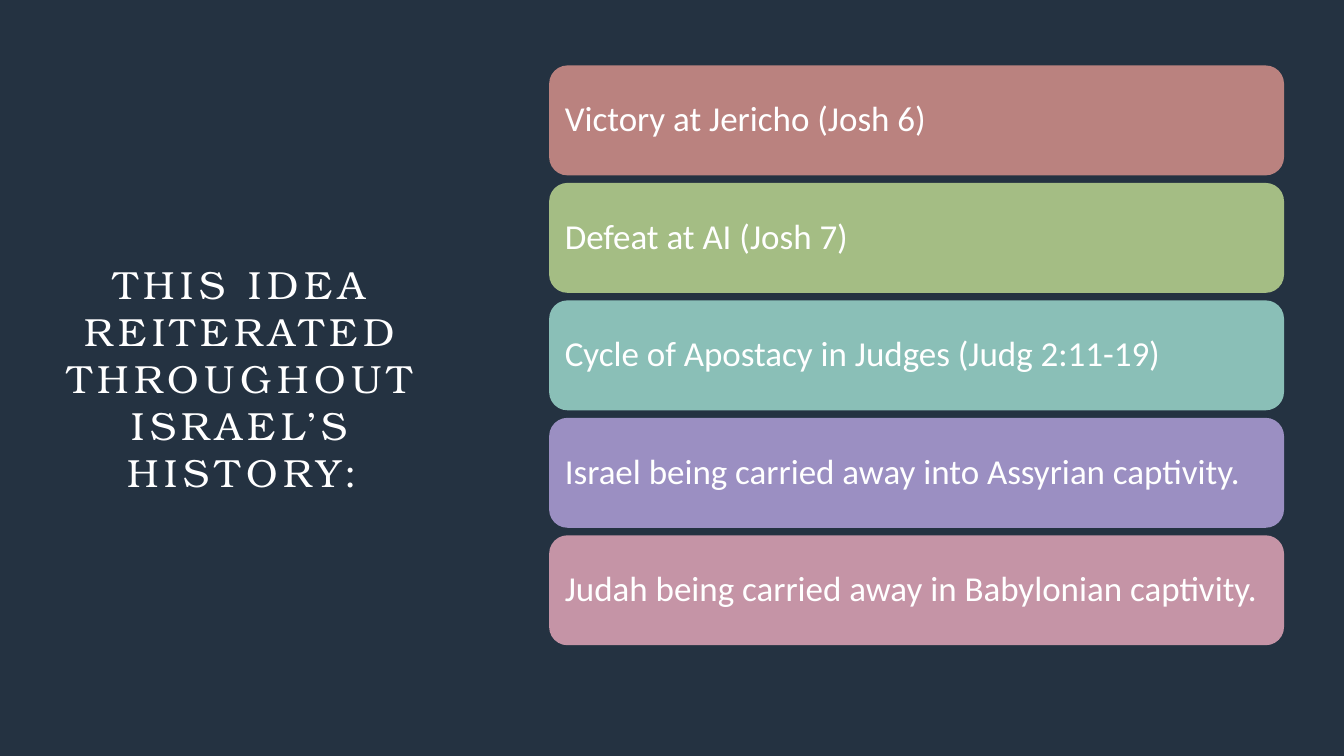
from dataclasses import dataclass
from typing import Any

import pptx
import pptx.dml.color
import pptx.enum.shapes
import pptx.enum.text
import pptx.util

Cm = pptx.util.Cm
Pt = pptx.util.Pt

COLORS = {
    "background": "243241",
    "text": "FFFFFF",
    "rose": "BA827F",
    "green": "A4BD84",
    "teal": "8ABFB7",
    "violet": "9B8FC2",
    "pink": "C594A6",
}

TITLE = "THIS IDEA REITERATED THROUGHOUT ISRAEL’S HISTORY:"
TITLE_BOX = {"left": Cm(1.5), "top": Cm(3), "width": Cm(9.22), "height": Cm(13.03)}
TITLE_FONT = {"name": "TeX Gyre Bonum", "size": Pt(28), "bold": False}
TITLE_SPACING = Pt(4)

BAR_LEFT = 13.84
BAR_TOP = 1.65
BAR_WIDTH = 18.52
BAR_HEIGHT = 2.77
BAR_PITCH = 2.96
BAR_FONT = {"name": "Calibri", "size": Pt(25), "bold": False}


@dataclass(frozen=True)
class Event:
    text: str
    color: str


EVENTS = [
    Event("Victory at Jericho (Josh 6)", "rose"),
    Event("Defeat at AI (Josh 7)", "green"),
    Event("Cycle of Apostacy in Judges (Judg 2:11-19)", "teal"),
    Event("Israel being carried away into Assyrian captivity.", "violet"),
    Event("Judah being carried away in Babylonian captivity.", "pink"),
]


def rgb(name: str) -> pptx.dml.color.RGBColor:
    return pptx.dml.color.RGBColor.from_string(COLORS[name])


def apply(target: Any, values: dict[str, Any]) -> None:
    for name, value in values.items():
        setattr(target, name, value)


def write_text(
    shape: Any,
    text: str,
    font: dict[str, Any],
    paragraph_format: dict[str, Any],
    margin: float,
) -> Any:
    frame = shape.text_frame
    sides = ("left", "top", "right", "bottom")
    apply(frame, {f"margin_{side}": Cm(margin) for side in sides})
    apply(frame, {
        "word_wrap": True,
        "auto_size": pptx.enum.text.MSO_AUTO_SIZE.NONE,
        "vertical_anchor": pptx.enum.text.MSO_ANCHOR.MIDDLE,
    })
    paragraph = frame.paragraphs[0]
    apply(paragraph, paragraph_format)
    run = paragraph.add_run()
    run.text = text
    apply(run.font, font)
    run.font.color.rgb = rgb("text")
    return run


def draw_title(slide: Any) -> None:
    title = slide.shapes.title
    apply(title, TITLE_BOX)
    centered = {"alignment": pptx.enum.text.PP_ALIGN.CENTER}
    run = write_text(title, TITLE, TITLE_FONT, centered, 0)
    run.font._element.set("spc", str(int(TITLE_SPACING.pt * 100)))


def draw_event(slide: Any, event: Event, index: int) -> None:
    bar = slide.shapes.add_shape(
        pptx.enum.shapes.MSO_SHAPE.ROUNDED_RECTANGLE,
        Cm(BAR_LEFT),
        Cm(BAR_TOP + index * BAR_PITCH),
        Cm(BAR_WIDTH),
        Cm(BAR_HEIGHT),
    )
    bar.shadow.inherit = False
    bar.fill.solid()
    bar.fill.fore_color.rgb = rgb(event.color)
    bar.line.fill.background()
    left_aligned = {"alignment": pptx.enum.text.PP_ALIGN.LEFT, "line_spacing": 0.9}
    write_text(bar, event.text, BAR_FONT, left_aligned, 0.26)


def main() -> None:
    presentation = pptx.Presentation()
    apply(presentation, {"slide_width": Cm(33.87), "slide_height": Cm(19.05)})
    slide = presentation.slides.add_slide(presentation.slide_layouts[5])
    slide.background.fill.solid()
    slide.background.fill.fore_color.rgb = rgb("background")
    draw_title(slide)
    for index, event in enumerate(EVENTS):
        draw_event(slide, event, index)
    presentation.save("out.pptx")


if __name__ == "__main__":
    main()
